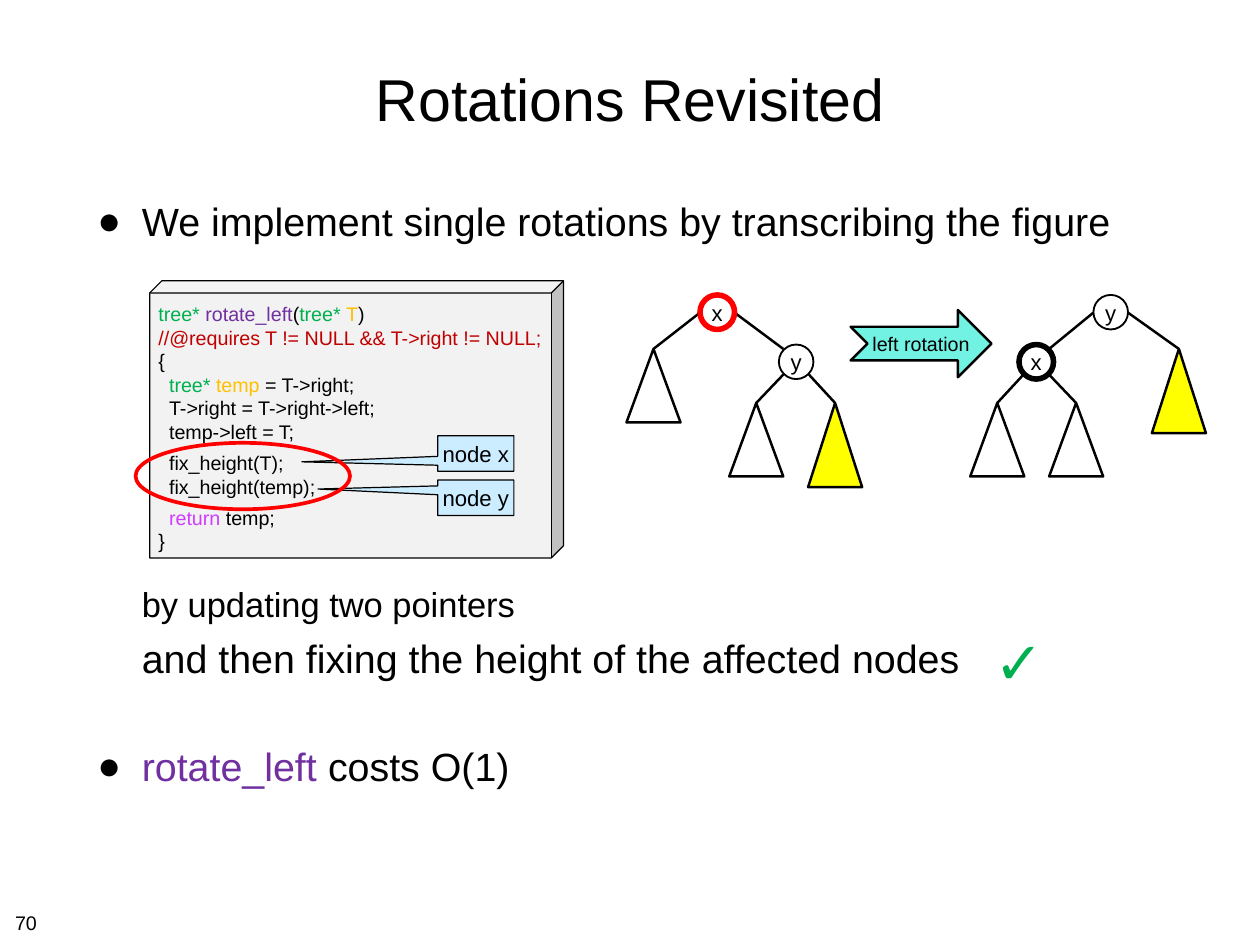
"""Build the slide about tree rotations, their code and their cost."""
from dataclasses import dataclass

from lxml import etree
from pptx import Presentation
from pptx.dml.color import RGBColor
from pptx.enum.shapes import MSO_CONNECTOR, MSO_SHAPE
from pptx.enum.text import MSO_ANCHOR, MSO_AUTO_SIZE, PP_ALIGN
from pptx.oxml.ns import qn
from pptx.util import Emu, Pt

PX = 9144
CUBE, OVAL, TRIANGLE = MSO_SHAPE.CUBE, MSO_SHAPE.OVAL, MSO_SHAPE.ISOSCELES_TRIANGLE
ARROW, CALLOUT = MSO_SHAPE.NOTCHED_RIGHT_ARROW, MSO_SHAPE.RECTANGULAR_CALLOUT
STRAIGHT = MSO_CONNECTOR.STRAIGHT
LEFT, CENTER = PP_ALIGN.LEFT, PP_ALIGN.CENTER
TOP, MIDDLE = MSO_ANCHOR.TOP, MSO_ANCHOR.MIDDLE
NO_FIT, GROW = MSO_AUTO_SIZE.NONE, MSO_AUTO_SIZE.SHAPE_TO_FIT_TEXT
NODE_SIZE, CORNER, SUBTREE_WIDTH = 39, 5, 61


@dataclass(frozen=True)
class Theme:
    font: str = "Arial"
    ink: str = "000000"
    red: str = "FF0000"
    green: str = "00B050"
    purple: str = "7030A0"
    amber: str = "FFC000"
    contract: str = "C00000"
    keyword: str = "D03BFF"
    panel: str = "F2F2F2"
    yellow: str = "FFFF00"
    arrow: str = "72F2E3"
    callout: str = "CCECFF"
    title: int = 48
    body: int = 32
    sub: int = 28
    label: int = 18
    code: int = 16


T = Theme()


@dataclass(frozen=True)
class Line:
    runs: tuple[tuple[str, str], ...]
    size: int = T.code
    before: int = 0
    after: int = 0
    margin: int = 0
    bullet: bool = False
    bold: bool = False


@dataclass(frozen=True)
class Node:
    label: str
    x: int
    y: int
    color: str = T.ink
    width: float = 1.5

    def side(self, right: bool) -> tuple[int, int]:
        return self.x + NODE_SIZE * right, self.y + NODE_SIZE // 2 + 1

    def corner(self, right: bool, bottom: bool) -> tuple[int, int]:
        far = NODE_SIZE - CORNER
        return self.x + (far if right else CORNER), self.y + (far if bottom else CORNER)


@dataclass(frozen=True)
class Subtree:
    x: int
    y: int
    grown: bool = False


@dataclass(frozen=True)
class Tree:
    root: Node
    inner: Node
    inner_right: bool
    outer: Subtree
    leaves: tuple[Subtree, Subtree]


@dataclass(frozen=True)
class Callout:
    text: str
    y: int
    tip: tuple[float, float]


CODE = (
    Line((("tree* ", T.green), ("rotate_left", T.purple), ("(", T.ink),
          ("tree* ", T.green), ("T", T.amber), (")", T.ink))),
    Line((("//@requires T != NULL && T->right != NULL;", T.contract),)),
    Line((("{", T.ink),)),
    Line((("tree* ", T.green), ("temp", T.amber), (" = T->right;", T.ink)), margin=12),
    Line((("T->right = T->right->left;", T.ink),), margin=12),
    Line((("temp->left = T;", T.ink),), margin=12),
    Line((("fix_height(T);", T.ink),), before=6, margin=12),
    Line((("fix_height(temp);", T.ink),), after=6, margin=12),
    Line((("return", T.keyword), (" temp;", T.ink)), margin=12),
    Line((("}", T.ink),)),
)
BODY = (
    Line((("We implement single rotations by transcribing the figure", T.ink),),
         T.body, before=8, margin=50, bullet=True),
    Line((("by updating two pointers", T.ink),), T.sub, before=275, margin=50),
    Line((("and then fixing the height of the affected nodes", T.ink),),
         T.body, before=8, margin=50),
    Line((("rotate_left", T.purple), (" costs O(1)", T.ink)),
         T.body, before=49, margin=50, bullet=True),
)
TREES = (
    Tree(Node("x", 790, 333, T.red, 4.5), Node("y", 879, 389), True,
         Subtree(707, 394), (Subtree(823, 455), Subtree(912, 455, True))),
    Tree(Node("y", 1234, 333), Node("x", 1150, 389, width=4.5), False,
         Subtree(1300, 394, True), (Subtree(1095, 455), Subtree(1184, 455))),
)
CALLOUTS = (Callout("node x", 492, (-2.283, 0.238)), Callout("node y", 542, (-2.071, -0.245)))


def px(*lengths: int) -> list[Emu]:
    return [Emu(n * PX) for n in lengths]


def write(tf, lines: tuple[Line, ...], align=CENTER, anchor=MIDDLE,
          inset=(6, 6, 6, 6), wrap: bool = True, fit=NO_FIT) -> None:
    tf.word_wrap, tf.auto_size, tf.vertical_anchor = wrap, fit, anchor
    tf.margin_left, tf.margin_top, tf.margin_right, tf.margin_bottom = px(*inset)
    for i, line in enumerate(lines):
        p = tf.add_paragraph() if i else tf.paragraphs[0]
        p.alignment = align
        p.space_before, p.space_after = Pt(line.before), Pt(line.after)
        pPr = p._p.get_or_add_pPr()
        pPr.set("marL", str(line.margin * PX))
        pPr.set("indent", str(-line.margin * PX if line.bullet else 0))
        if line.bullet:
            color = etree.SubElement(pPr, qn("a:buClr"))
            etree.SubElement(color, qn("a:srgbClr")).set("val", T.ink)
            etree.SubElement(pPr, qn("a:buFont")).set("typeface", T.font)
            etree.SubElement(pPr, qn("a:buChar")).set("char", "●")
        else:
            etree.SubElement(pPr, qn("a:buNone"))
        for text, color in line.runs:
            r = p.add_run()
            r.text = text
            r.font.name, r.font.size, r.font.bold = T.font, Pt(line.size), line.bold
            r.font.color.rgb = RGBColor.from_string(color)


def add_shape(slide, kind, box: tuple[int, int, int, int], fill: str | None = None,
              color: str = T.ink, width: float = 2, adjust: tuple[float, ...] = ()):
    sp = slide.shapes.add_shape(kind, *px(*box))
    sp.shadow.inherit = False
    if fill:
        sp.fill.solid()
        sp.fill.fore_color.rgb = RGBColor.from_string(fill)
    else:
        sp.fill.background()
    sp.line.color.rgb = RGBColor.from_string(color)
    sp.line.width = Pt(width)
    for i, value in enumerate(adjust):
        sp.adjustments[i] = value
    return sp


def add_edge(slide, start: tuple[int, int], end: tuple[int, int]):
    cxn = slide.shapes.add_connector(STRAIGHT, *px(*start, *end))
    cxn.line.color.rgb = RGBColor.from_string(T.ink)
    cxn.line.width = Pt(2)
    etree.SubElement(cxn._element.spPr, qn("a:effectLst"))
    return cxn


def add_subtree(slide, subtree: Subtree, start: tuple[int, int]) -> None:
    sp = add_shape(slide, TRIANGLE,
                   (subtree.x, subtree.y, SUBTREE_WIDTH, 95 if subtree.grown else 83),
                   T.yellow if subtree.grown else None)
    apex = (subtree.x + SUBTREE_WIDTH // 2, subtree.y)
    add_edge(slide, start, apex).end_connect(sp, 0)


def add_tree(slide, tree: Tree) -> None:
    right = tree.inner_right
    add_edge(slide, tree.root.side(right), tree.inner.corner(not right, False))
    add_subtree(slide, tree.outer, tree.root.side(not right))
    for leaf, leaf_right in zip(tree.leaves, (False, True)):
        add_subtree(slide, leaf, tree.inner.corner(leaf_right, True))
    for node in (tree.root, tree.inner):
        sp = add_shape(slide, OVAL, (node.x, node.y, NODE_SIZE, NODE_SIZE),
                       color=node.color, width=node.width)
        write(sp.text_frame, (Line(((node.label, T.ink),), T.label),))


def add_label(slide, box: tuple[int, int, int, int], line: Line, align, inset) -> None:
    sp = slide.shapes.add_textbox(*px(*box))
    write(sp.text_frame, (line,), align, TOP, inset, wrap=False)


def main() -> None:
    prs = Presentation()
    prs.slide_width, prs.slide_height = px(1422, 1067)
    slide = prs.slides.add_slide(prs.slide_layouts[1])
    title, body = slide.shapes.title, slide.placeholders[1]
    for sp, box in ((title, (104, 28, 1214, 164)), (body, (104, 217, 1214, 754))):
        sp.left, sp.top, sp.width, sp.height = px(*box)
    write(title.text_frame, (Line((("Rotations Revisited", T.ink),), T.title),))
    write(body.text_frame, BODY, LEFT, TOP)

    panel = add_shape(slide, CUBE, (169, 317, 467, 313), T.panel, width=1, adjust=(0.044,))
    write(panel.text_frame, CODE, LEFT, TOP, (10, 10, 6, 6), wrap=False, fit=GROW)
    for tree in TREES:
        add_tree(slide, tree)
    arrow = add_shape(slide, ARROW, (960, 350, 159, 76), T.arrow)
    write(arrow.text_frame, (Line((("left rotation", T.ink),)),), wrap=False)
    for note in CALLOUTS:
        sp = add_shape(slide, CALLOUT, (494, note.y, 86, 40), T.callout, width=1, adjust=note.tip)
        write(sp.text_frame, (Line(((note.text, T.ink),), T.label),), inset=(5, 5, 5, 5), wrap=False)
    add_shape(slide, OVAL, (153, 500, 242, 75), color=T.red, width=3)

    check = Line((("✓", T.green),), T.title, bold=True)
    add_label(slide, (1114, 701, 72, 91), check, CENTER, (10, 5, 10, 5))
    add_label(slide, (11, 1023, 37, 35), Line((("70", T.ink),)), LEFT, (6, 6, 6, 6))
    prs.save("out.pptx")


if __name__ == "__main__":
    main()
